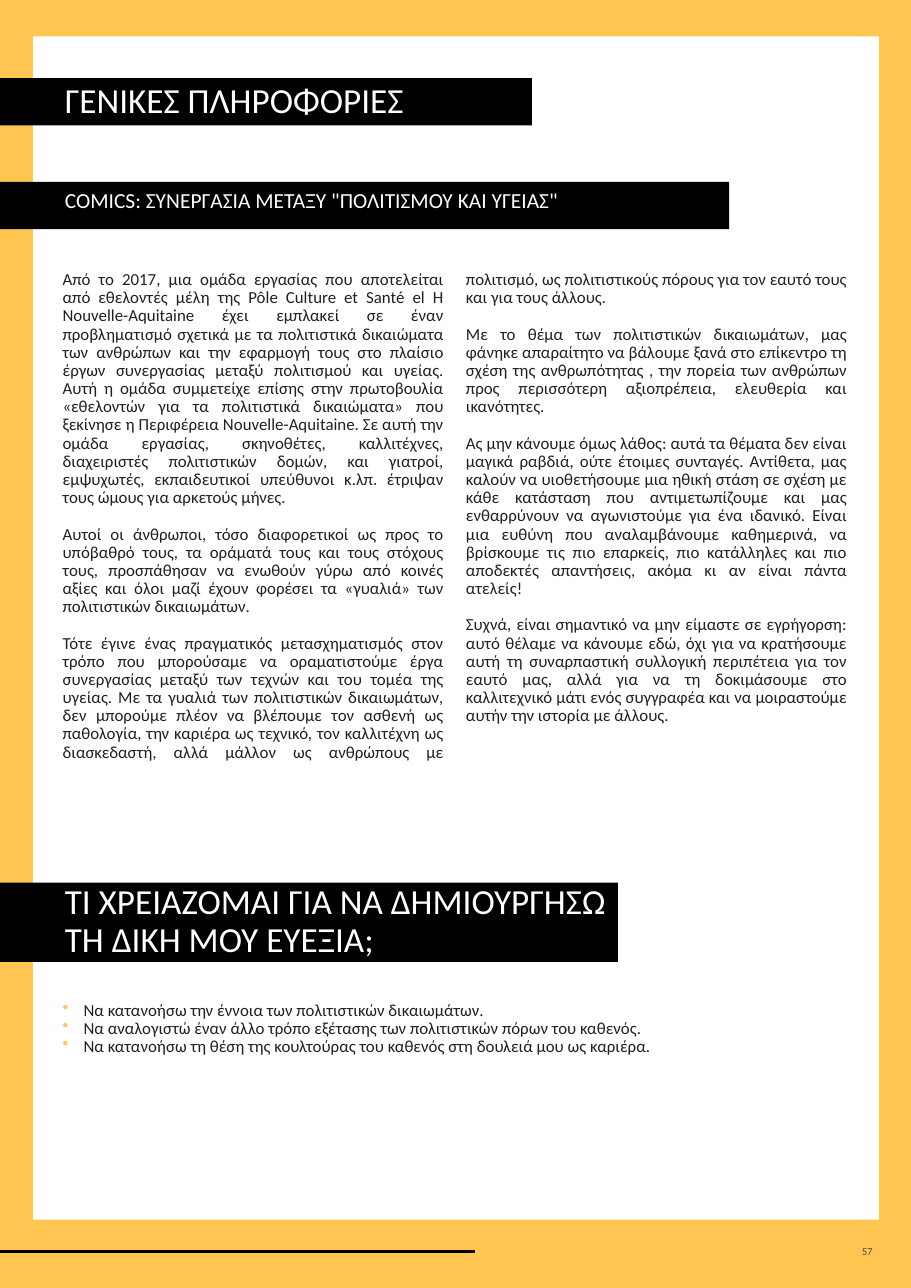
from dataclasses import dataclass

from lxml import etree
from pptx import Presentation
from pptx.dml.color import RGBColor
from pptx.enum.shapes import MSO_CONNECTOR, MSO_SHAPE
from pptx.enum.text import MSO_ANCHOR, PP_ALIGN
from pptx.oxml.ns import qn
from pptx.slide import Slide
from pptx.text.text import TextFrame
from pptx.util import Pt

RECTANGLE = MSO_SHAPE.RECTANGLE
STRAIGHT = MSO_CONNECTOR.STRAIGHT
TOP, MIDDLE = MSO_ANCHOR.TOP, MSO_ANCHOR.MIDDLE
LEFT, RIGHT, JUSTIFY = PP_ALIGN.LEFT, PP_ALIGN.RIGHT, PP_ALIGN.JUSTIFY

PX = 9144  # EMU per px, 100 px to the inch
FONT = "Calibri"
COLORS = {
    "frame": "FFC652",
    "page": "FFFFFF",
    "bar": "000000",
    "heading": "FFFFFF",
    "body": "221F1F",
    "number": "4B4B4B",
}
PAGE_WIDTH, PAGE_HEIGHT = 827, 1169
HEADING_INDENT = 49
BULLET_INDENT = 19
COLUMN_GAP = 20


@dataclass(frozen=True)
class Box:
    left: int
    top: int
    width: int
    height: int

    def emu(self) -> tuple[int, int, int, int]:
        return self.left * PX, self.top * PX, self.width * PX, self.height * PX


@dataclass(frozen=True)
class TextStyle:
    size: float
    color: str
    align: PP_ALIGN = LEFT
    anchor: MSO_ANCHOR = TOP
    line_spacing: float = 1.0
    gap: float = 0
    indent: int = 0
    bullet: bool = False


@dataclass(frozen=True)
class HeadingBar:
    box: Box
    text: str
    style: TextStyle


SECTION = TextStyle(23, "heading", anchor=MIDDLE, line_spacing=0.9, indent=HEADING_INDENT)
SUBSECTION = TextStyle(14, "heading", indent=HEADING_INDENT)
ARTICLE = TextStyle(11, "body", JUSTIFY, line_spacing=0.9, gap=11.9)
NEEDS = TextStyle(11, "body", JUSTIFY, line_spacing=0.9, indent=BULLET_INDENT, bullet=True)
PAGE_NUMBER = TextStyle(7, "number", RIGHT, MIDDLE)

HEADING_BARS = [
    HeadingBar(Box(0, 165, 662, 43),
               "COMICS: ΣΥΝΕΡΓΑΣΙΑ ΜΕΤΑΞΥ \"ΠΟΛΙΤΙΣΜΟΥ ΚΑΙ ΥΓΕΙΑΣ\"", SUBSECTION),
    HeadingBar(Box(0, 71, 483, 43), "ΓΕΝΙΚΕΣ ΠΛΗΡΟΦΟΡΙΕΣ", SECTION),
    HeadingBar(Box(0, 801, 561, 72),
               "ΤΙ ΧΡΕΙΑΖΟΜΑΙ ΓΙΑ ΝΑ ΔΗΜΙΟΥΡΓΗΣΩ ΤΗ ΔΙΚΗ ΜΟΥ ΕΥΕΞΙΑ;", SECTION),
]

ARTICLE_PARAGRAPHS = [
    "Από το 2017, μια ομάδα εργασίας που αποτελείται από εθελοντές μέλη της Pôle Culture "
    "et Santé el Η Nouvelle-Aquitaine έχει εμπλακεί σε έναν προβληματισμό σχετικά με τα "
    "πολιτιστικά δικαιώματα των ανθρώπων και την εφαρμογή τους στο πλαίσιο έργων "
    "συνεργασίας μεταξύ πολιτισμού και υγείας. Αυτή η ομάδα συμμετείχε επίσης στην "
    "πρωτοβουλία «εθελοντών για τα πολιτιστικά δικαιώματα» που ξεκίνησε η Περιφέρεια "
    "Nouvelle-Aquitaine. Σε αυτή την ομάδα εργασίας, σκηνοθέτες, καλλιτέχνες, "
    "διαχειριστές πολιτιστικών δομών, και γιατροί, εμψυχωτές, εκπαιδευτικοί υπεύθυνοι "
    "κ.λπ. έτριψαν τους ώμους για αρκετούς μήνες.",
    "Αυτοί οι άνθρωποι, τόσο διαφορετικοί ως προς το υπόβαθρό τους, τα οράματά τους και "
    "τους στόχους τους, προσπάθησαν να ενωθούν γύρω από κοινές αξίες και όλοι μαζί έχουν "
    "φορέσει τα «γυαλιά» των πολιτιστικών δικαιωμάτων.",
    "Τότε έγινε ένας πραγματικός μετασχηματισμός στον τρόπο που μπορούσαμε να "
    "οραματιστούμε έργα συνεργασίας μεταξύ των τεχνών και του τομέα της υγείας. Με τα "
    "γυαλιά των πολιτιστικών δικαιωμάτων, δεν μπορούμε πλέον να βλέπουμε τον ασθενή ως "
    "παθολογία, την καριέρα ως τεχνικό, τον καλλιτέχνη ως διασκεδαστή, αλλά μάλλον ως "
    "ανθρώπους με πολιτισμό, ως πολιτιστικούς πόρους για τον εαυτό τους και για τους "
    "άλλους.",
    "Με το θέμα των πολιτιστικών δικαιωμάτων, μας φάνηκε απαραίτητο να βάλουμε ξανά στο "
    "επίκεντρο τη σχέση της ανθρωπότητας , την πορεία των ανθρώπων προς περισσότερη "
    "αξιοπρέπεια, ελευθερία και ικανότητες.",
    "Ας μην κάνουμε όμως λάθος: αυτά τα θέματα δεν είναι μαγικά ραβδιά, ούτε έτοιμες "
    "συνταγές. Αντίθετα, μας καλούν να υιοθετήσουμε μια ηθική στάση σε σχέση με κάθε "
    "κατάσταση που αντιμετωπίζουμε και μας ενθαρρύνουν να αγωνιστούμε για ένα ιδανικό. "
    "Είναι μια ευθύνη που αναλαμβάνουμε καθημερινά, να βρίσκουμε τις πιο επαρκείς, πιο "
    "κατάλληλες και πιο αποδεκτές απαντήσεις, ακόμα κι αν είναι πάντα ατελείς!",
    "Συχνά, είναι σημαντικό να μην είμαστε σε εγρήγορση: αυτό θέλαμε να κάνουμε εδώ, όχι "
    "για να κρατήσουμε αυτή τη συναρπαστική συλλογική περιπέτεια για τον εαυτό μας, αλλά "
    "για να τη δοκιμάσουμε στο καλλιτεχνικό μάτι ενός συγγραφέα και να μοιραστούμε αυτήν "
    "την ιστορία με άλλους.",
]

NEEDS_ITEMS = [
    "Να κατανοήσω την έννοια των πολιτιστικών δικαιωμάτων.",
    "Να αναλογιστώ έναν άλλο τρόπο εξέτασης των πολιτιστικών πόρων του καθενός.",
    "Να κατανοήσω τη θέση της κουλτούρας του καθενός στη δουλειά μου ως καριέρα.",
]


def rgb(name: str) -> RGBColor:
    return RGBColor.from_string(COLORS[name])


def fill_text(frame: TextFrame, paragraphs: list[str], style: TextStyle) -> None:
    frame.word_wrap = True
    frame.vertical_anchor = style.anchor
    frame.text = "\n".join(paragraphs)
    for index, paragraph in enumerate(frame.paragraphs):
        properties = paragraph._p.get_or_add_pPr()
        properties.set("marL", str(style.indent * PX))
        if style.bullet:
            properties.set("indent", str(-style.indent * PX))
            bullet_color = etree.SubElement(properties, qn("a:buClr"))
            etree.SubElement(bullet_color, qn("a:srgbClr"), val=COLORS["frame"])
            etree.SubElement(properties, qn("a:buChar"), char="•")
        paragraph.alignment = style.align
        paragraph.line_spacing = style.line_spacing
        if index and style.gap:
            paragraph.space_before = Pt(style.gap)
        for run in paragraph.runs:
            run.font.name = FONT
            run.font.size = Pt(style.size)
            run.font.color.rgb = rgb(style.color)


def add_panel(slide: Slide, box: Box, color: str) -> TextFrame:
    panel = slide.shapes.add_shape(RECTANGLE, *box.emu())
    panel.shadow.inherit = False
    panel.fill.solid()
    panel.fill.fore_color.rgb = rgb(color)
    panel.line.fill.background()
    return panel.text_frame


def add_text(slide: Slide, box: Box, paragraphs: list[str], style: TextStyle,
             columns: int = 1) -> None:
    frame = slide.shapes.add_textbox(*box.emu()).text_frame
    fill_text(frame, paragraphs, style)
    if columns > 1:
        body = frame._txBody.bodyPr
        body.set("numCol", str(columns))
        body.set("spcCol", str(COLUMN_GAP * PX))


def add_footer_rule(slide: Slide, width: int, top: int) -> None:
    rule = slide.shapes.add_connector(STRAIGHT, 0, top * PX, width * PX, top * PX)
    rule.line.color.rgb = rgb("bar")
    rule.line.width = Pt(1.5)
    etree.SubElement(rule._element.spPr, qn("a:effectLst"))


def main() -> None:
    presentation = Presentation()
    presentation.slide_width = PAGE_WIDTH * PX
    presentation.slide_height = PAGE_HEIGHT * PX
    slide = presentation.slides.add_slide(presentation.slide_layouts[6])

    # Yellow frame, white page and footer
    add_panel(slide, Box(0, 0, PAGE_WIDTH, PAGE_HEIGHT), "frame")
    add_panel(slide, Box(30, 33, 768, 1074), "page")
    add_footer_rule(slide, 431, 1136)
    add_text(slide, Box(694, 1128, 108, 16), ["57"], PAGE_NUMBER)

    # Two-column article
    add_text(slide, Box(47, 241, 732, 462), ARTICLE_PARAGRAPHS, ARTICLE, columns=2)

    # Black heading bars
    for bar in HEADING_BARS:
        fill_text(add_panel(slide, bar.box, "bar"), [bar.text], bar.style)

    # Bulleted needs
    add_text(slide, Box(47, 904, 732, 72), NEEDS_ITEMS, NEEDS)

    presentation.save("out.pptx")


if __name__ == "__main__":
    main()
